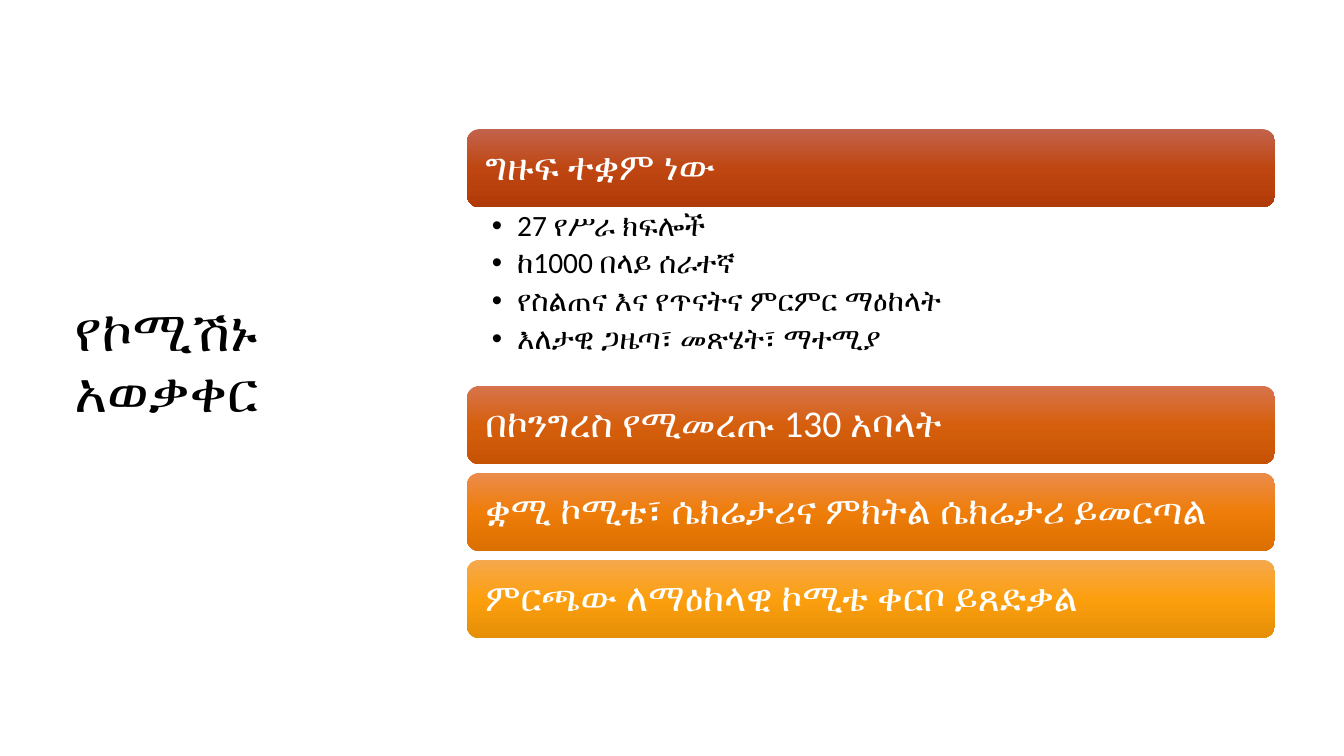
from copy import deepcopy
from dataclasses import dataclass

from pptx import Presentation
from pptx.dml.color import RGBColor
from pptx.enum.shapes import MSO_SHAPE as Shape
from pptx.enum.text import MSO_ANCHOR as Anchor, MSO_AUTO_SIZE as AutoSize, PP_ALIGN as Align
from pptx.slide import Slide
from pptx.text.text import TextFrame
from pptx.util import Pt

BLACK = RGBColor(0x00, 0x00, 0x00)
WHITE = RGBColor(0xFF, 0xFF, 0xFF)
RUST = (RGBColor(0xC2, 0x63, 0x4D), RGBColor(0xBF, 0x46, 0x11), RGBColor(0xB1, 0x3B, 0x08))
BURNT = (RGBColor(0xD7, 0x74, 0x4D), RGBColor(0xD6, 0x5F, 0x0D), RGBColor(0xC6, 0x53, 0x04))
ORANGE = (RGBColor(0xEC, 0x8C, 0x4C), RGBColor(0xEE, 0x7D, 0x09), RGBColor(0xDB, 0x6F, 0x00))
AMBER = (RGBColor(0xF5, 0xA8, 0x4E), RGBColor(0xFC, 0x9F, 0x0E), RGBColor(0xE5, 0x8F, 0x07))

LEFT, WIDTH = 333.4, 577.4
BAR_HEIGHT, BAR_PITCH = 56, 62.1
FIRST_TOP, LIST_TOP, SECOND_TOP = 92.2, 148, 275.6
INDENT = Pt(18)


@dataclass(frozen=True)
class Bar:
    text: str
    top: float
    colors: tuple[RGBColor, RGBColor, RGBColor]


@dataclass(frozen=True)
class TextStyle:
    font: dict
    frame: dict
    paragraph: dict


def text_style(size: float, color: RGBColor, anchor: Anchor, after: float,
               insets: tuple[float, float, float, float]) -> TextStyle:
    sides = ("margin_left", "margin_top", "margin_right", "margin_bottom")
    return TextStyle(
        font={"name": "Calibri", "size": Pt(size), "color": color},
        frame={"word_wrap": True, "auto_size": AutoSize.NONE, "vertical_anchor": anchor,
               **{side: Pt(inset) for side, inset in zip(sides, insets)}},
        paragraph={"alignment": Align.LEFT, "line_spacing": 0.9,
                   "space_before": Pt(0), "space_after": Pt(after)},
    )


TITLE_STYLE = text_style(40, BLACK, Anchor.BOTTOM, 0, (7.2, 3.6, 7.2, 3.6))
BAR_STYLE = text_style(27, WHITE, Anchor.MIDDLE, 0, (10.6, 8, 10.6, 8))
LIST_STYLE = text_style(21, BLACK, Anchor.TOP, 4.2, (18, 2.7, 15, 2.7))

BARS = [Bar("ግዙፍ ተቋም ነው", FIRST_TOP, RUST)] + [
    Bar(text, SECOND_TOP + i * BAR_PITCH, colors)
    for i, (text, colors) in enumerate([
        ("በኮንግረስ የሚመረጡ 130 አባላት", BURNT),
        ("ቋሚ ኮሚቴ፣ ሴክሬታሪና ምክትል ሴክሬታሪ ይመርጣል", ORANGE),
        ("ምርጫው ለማዕከላዊ ኮሚቴ ቀርቦ ይጸድቃል", AMBER),
    ])
]
DEPARTMENTS = [
    "27 የሥራ ክፍሎች",
    "ከ1000 በላይ ሰራተኛ",
    "የስልጠና እና የጥናትና ምርምር ማዕከላት",
    "እለታዊ ጋዜጣ፣ መጽሄት፣ ማተሚያ",
]


def apply(target: object, values: dict) -> None:
    for name, value in values.items():
        if isinstance(value, RGBColor):
            getattr(target, name).rgb = value
        else:
            setattr(target, name, value)


def write(tf: TextFrame, lines: list[str], style: TextStyle) -> None:
    apply(tf, style.frame)
    for i, line in enumerate(lines):
        p = tf.add_paragraph() if i else tf.paragraphs[0]
        apply(p, style.paragraph)
        r = p.add_run()
        r.text = line
        apply(r.font, style.font)


def place(sp: object, left: float, top: float, width: float, height: float) -> None:
    apply(sp, {"left": Pt(left), "top": Pt(top), "width": Pt(width), "height": Pt(height)})


def add_bar(slide: Slide, bar: Bar) -> None:
    sp = slide.shapes.add_shape(
        Shape.ROUNDED_RECTANGLE, Pt(LEFT), Pt(bar.top), Pt(WIDTH), Pt(BAR_HEIGHT))
    sp.shadow.inherit = False
    sp.line.fill.background()
    sp.fill.gradient()
    sp.fill.gradient_angle = 270
    stops = sp.element.spPr.gradFill.gsLst
    stops.insert(1, deepcopy(stops[0]))
    for i, (stop, color) in enumerate(zip(sp.fill.gradient_stops, bar.colors)):
        stop.position = i / 2
        stop.color.rgb = color
    write(sp.text_frame, [bar.text], BAR_STYLE)


def add_list(slide: Slide) -> None:
    body = slide.placeholders[1]
    place(body, LEFT, LIST_TOP, WIDTH, SECOND_TOP - LIST_TOP)
    write(body.text_frame, DEPARTMENTS, LIST_STYLE)
    for p in body.text_frame.paragraphs:
        pPr = p._p.get_or_add_pPr()
        pPr.set("marL", str(INDENT))
        pPr.set("indent", str(-INDENT))


def main() -> None:
    prs = Presentation()
    prs.slide_width, prs.slide_height = Pt(960), Pt(540)
    slide = prs.slides.add_slide(prs.slide_layouts[1])
    title = slide.shapes.title
    place(title, 46, 216, 259.2, 90.7)
    write(title.text_frame, ["የኮሚሽኑ አወቃቀር"], TITLE_STYLE)
    add_list(slide)
    for bar in BARS:
        add_bar(slide, bar)
    prs.save("out.pptx")


if __name__ == "__main__":
    main()
